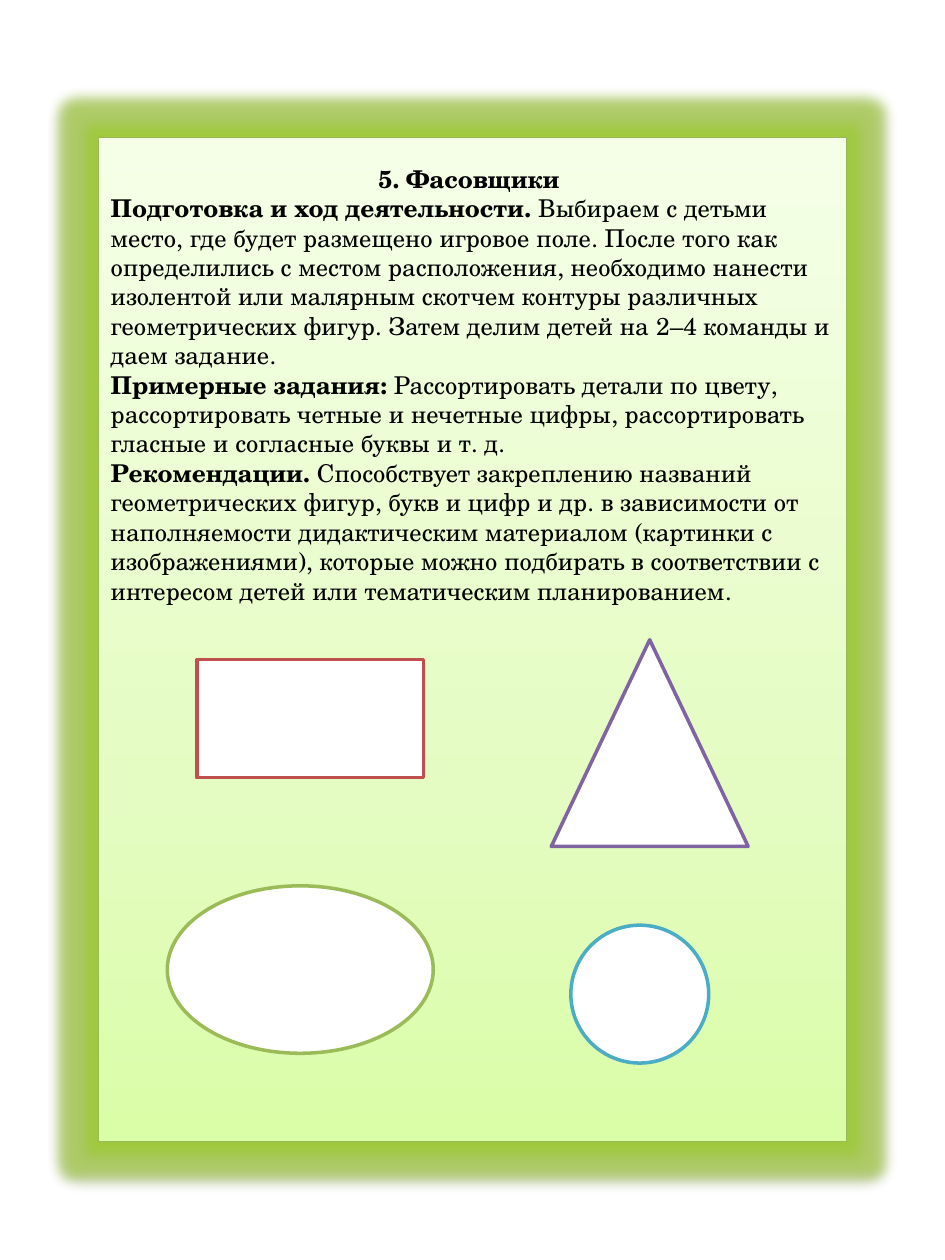
"""Build the activity card "Фасовщики" with its four geometric figures."""
from copy import deepcopy
from typing import NamedTuple

from lxml.etree import SubElement
from pptx import Presentation
from pptx.dml.color import RGBColor
from pptx.enum.shapes import MSO_SHAPE as Shape
from pptx.enum.text import MSO_AUTO_SIZE as AutoSize, PP_ALIGN as Align
from pptx.oxml.ns import qn
from pptx.util import Pt

FONT = "TeX Gyre Schola"
BLACK = RGBColor(0x00, 0x00, 0x00)
WHITE = RGBColor(0xFF, 0xFF, 0xFF)
RED = RGBColor(0xC0, 0x50, 0x4D)
PURPLE = RGBColor(0x80, 0x64, 0xA2)
GREEN = RGBColor(0x9B, 0xBB, 0x59)
BLUE = RGBColor(0x4B, 0xAC, 0xC6)
CARD_LINE = RGBColor(0x98, 0xB9, 0x55)
GLOW = RGBColor(0xA0, 0xD0, 0x2C)
CARD_STOPS = (
    (0, RGBColor(0xDA, 0xFD, 0xA7)),
    (0.35, RGBColor(0xE4, 0xFC, 0xC2)),
    (1, RGBColor(0xF5, 0xFF, 0xE7)),
)


class Box(NamedTuple):
    left: float
    top: float
    width: float
    height: float

    def emu(self) -> list:
        return [Pt(v) for v in self]


class Figure(NamedTuple):
    kind: Shape
    box: Box
    color: RGBColor


class Section(NamedTuple):
    heading: str
    body: str = ""
    align: Align = Align.LEFT


CARD = Box(56.2, 78.5, 427.7, 573.8)
TEXT = Box(56.2, 90, 427.7, 262)
FIGURES = (
    Figure(Shape.RECTANGLE, Box(112.5, 376.9, 129.6, 67.5), RED),
    Figure(Shape.ISOSCELES_TRIANGLE, Box(315, 365.6, 112.5, 118.1), PURPLE),
    Figure(Shape.OVAL, Box(95.6, 506.2, 152, 95.7), GREEN),
    Figure(Shape.FLOWCHART_CONNECTOR, Box(326.2, 528.7, 78.8, 78.8), BLUE),
)
SECTIONS = (
    Section("5. Фасовщики ", align=Align.CENTER),
    Section(
        "Подготовка и ход деятельности. ",
        "Выбираем с детьми место, где будет размещено игровое поле. "
        "После того как определились с местом расположения, необходимо "
        "нанести изолентой или малярным скотчем контуры различных "
        "геометрических фигур. Затем делим детей на 2–4 команды и даем задание.",
    ),
    Section(
        "Примерные задания: ",
        "Рассортировать детали по цвету, рассортировать четные и нечетные "
        "цифры, рассортировать гласные и согласные буквы и т. д.",
    ),
    Section(
        "Рекомендации. ",
        "Способствует закреплению названий геометрических фигур, букв и цифр "
        "и др. в зависимости от наполняемости дидактическим материалом "
        "(картинки с изображениями), которые можно подбирать в соответствии "
        "с интересом детей или тематическим планированием.",
    ),
)


def add_figure(s, fig: Figure, weight: float):
    """Add a white outlined figure and return it."""
    sp = s.shapes.add_shape(fig.kind, *fig.box.emu())
    sp.shadow.inherit = False
    sp.fill.solid()
    sp.fill.fore_color.rgb = WHITE
    sp.line.color.rgb = fig.color
    sp.line.width = Pt(weight)
    return sp


def add_effect(effects, tag: str, color: RGBColor, alpha: int, **attrs: int) -> None:
    """Append a coloured, partly transparent effect to an effect list."""
    effect = SubElement(effects, qn(tag), {k: str(int(v)) for k, v in attrs.items()})
    clr = SubElement(effect, qn("a:srgbClr"), val=str(color))
    SubElement(clr, qn("a:alpha"), val=str(alpha * 1000))


def add_card(s) -> None:
    """Add the gradient card with its glow and shadow."""
    sp = add_figure(s, Figure(Shape.RECTANGLE, CARD, CARD_LINE), 0.75)
    sp.fill.gradient()
    sp.fill.gradient_angle = 90
    stops = sp.element.spPr.find(qn("a:gradFill")).find(qn("a:gsLst"))
    stops.append(deepcopy(stops[-1]))
    for stop, (position, color) in zip(sp.fill.gradient_stops, CARD_STOPS):
        stop.position = position
        stop.color.rgb = color
    effects = sp.element.spPr.find(qn("a:effectLst"))
    add_effect(effects, "a:glow", GLOW, 60, rad=Pt(14))
    add_effect(effects, "a:outerShdw", BLACK, 38, blurRad=Pt(3.1), dist=Pt(1.6),
               dir=90 * 60000, rotWithShape=0)


def add_run(p, text: str, bold: bool) -> None:
    """Add one run in the card's typeface."""
    r = p.add_run()
    r.text = text
    r.font.name = FONT
    r.font.size = Pt(14)
    r.font.bold = bold
    r.font.color.rgb = BLACK


def add_text(s) -> None:
    """Add the title and the described sections."""
    tf = s.shapes.add_textbox(*TEXT.emu()).text_frame
    tf.word_wrap = True
    tf.auto_size = AutoSize.SHAPE_TO_FIT_TEXT
    for i, section in enumerate(SECTIONS):
        p = tf.add_paragraph() if i else tf.paragraphs[0]
        p.alignment = section.align
        add_run(p, section.heading, True)
        if section.body:
            add_run(p, section.body, False)


def main() -> None:
    """Build and save the slide."""
    prs = Presentation()
    prs.slide_width, prs.slide_height = Pt(540), Pt(720)
    s = prs.slides.add_slide(prs.slide_layouts[6])
    add_card(s)
    add_text(s)
    for fig in FIGURES:
        add_figure(s, fig, 2)
    prs.save("out.pptx")


if __name__ == "__main__":
    main()
